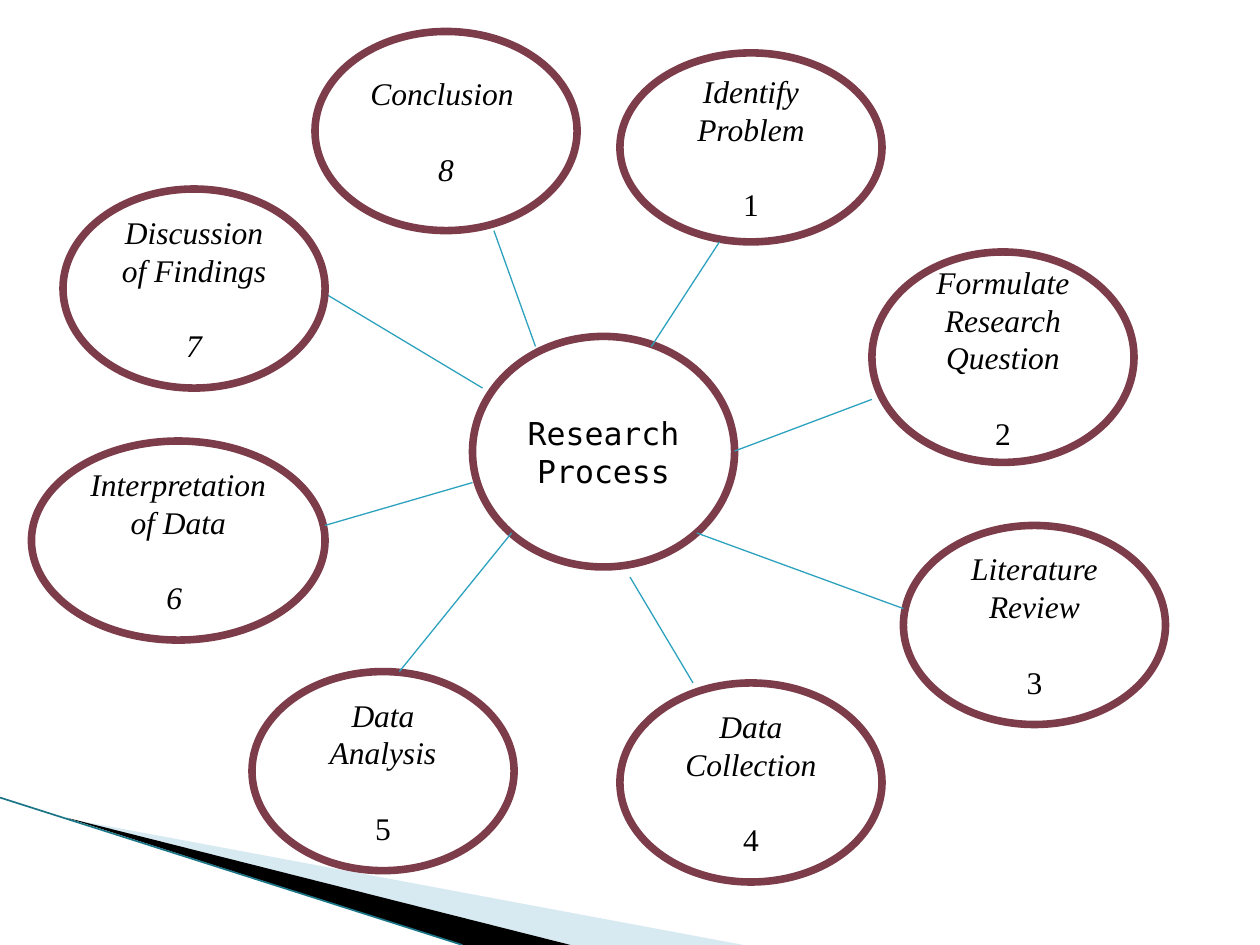
from typing import NamedTuple

from lxml import etree
from pptx import Presentation
from pptx.dml.color import RGBColor
from pptx.enum.shapes import MSO_CONNECTOR, MSO_SHAPE
from pptx.enum.text import MSO_ANCHOR, PP_ALIGN
from pptx.oxml.ns import qn
from pptx.util import Inches, Pt

STRAIGHT = MSO_CONNECTOR.STRAIGHT
OVAL = MSO_SHAPE.FLOWCHART_CONNECTOR
MIDDLE = MSO_ANCHOR.MIDDLE
CENTER = PP_ALIGN.CENTER

SERIF = "Times New Roman"
MONO = "DejaVu Sans Mono"
WHITE, BLACK = "FFFFFF", "000000"
WINE, TEAL, DEEP, PALE = "7D3C4A", "2DA2BF", "1B7587", "D7E9F1"


class Step(NamedTuple):
    label: str
    number: str
    left: float
    top: float
    width: float = 2.08
    height: float = 1.58
    slant: bool = False


class Spoke(NamedTuple):
    x1: float
    y1: float
    x2: float
    y2: float


HUB = Step("Research Process", "", 3.75, 2.67, height=1.83)
STEPS = [
    Step("Identify Problem", "1", 4.92, 0.42, height=1.5),
    Step("Formulate Research Question", "2", 6.92, 2, height=1.67),
    Step("Literature Review", "3", 7.17, 4.17),
    Step("Data Collection", "4", 4.92, 5.42),
    Step("Data Analysis", "5", 2, 5.33),
    Step("Interpretation of Data", "6 ", 0.25, 3.5, width=2.33, slant=True),
    Step("Conclusion ", "8", 2.5, 0.25, slant=True),
]
FRONT = Step("Discussion of Findings", "7", 0.5, 1.5, slant=True)
SPOKES = [
    Spoke(5.17, 2.75, 5.71, 1.92),
    Spoke(5.83, 3.58, 6.92, 3.17),
    Spoke(5.53, 4.23, 7.17, 4.83),
    Spoke(5, 4.58, 5.5, 5.42),
    Spoke(4.06, 4.23, 3.17, 5.33),
    Spoke(3.75, 3.83, 2.58, 4.17),
    Spoke(2.58, 2.33, 3.83, 3.08),
    Spoke(4.25, 2.75, 3.92, 1.83),
]
EDGE = Spoke(0, 6.33, 3.67, 7.5)


def paint(target, color: str):
    target.solid()
    target.fore_color.rgb = RGBColor.from_string(color)


def write(para, text: str, *, font=SERIF, size=18, color=BLACK,
          italic=False, before=0):
    para.alignment = CENTER
    para.space_before = Pt(before)
    run = para.add_run()
    run.text = text
    run.font.name = font
    run.font.size = Pt(size)
    run.font.italic = italic
    paint(run.font.fill, color)


def draw_oval(slide, step: Step):
    oval = slide.shapes.add_shape(
        OVAL, Inches(step.left), Inches(step.top),
        Inches(step.width), Inches(step.height))
    oval.shadow.inherit = False
    paint(oval.fill, WHITE)
    paint(oval.line.fill, WINE)
    oval.line.width = Pt(4.33)
    frame = oval.text_frame
    frame.word_wrap = True
    frame.vertical_anchor = MIDDLE
    return frame


def draw_step(slide, step: Step):
    frame = draw_oval(slide, step)
    write(frame.paragraphs[0], step.label, italic=True)
    write(frame.add_paragraph(), step.number, italic=step.slant, before=21.5)


def draw_line(slide, spoke: Spoke, color: str, width: float):
    line = slide.shapes.add_connector(STRAIGHT, *map(Inches, spoke))
    paint(line.line.fill, color)
    line.line.width = Pt(width)
    etree.SubElement(line._element.spPr, qn("a:effectLst"))


def draw_wedge(slide, points: list[tuple[float, float]], color: str):
    first, *rest = [(Inches(x), Inches(y)) for x, y in points]
    pen = slide.shapes.build_freeform(*first)
    pen.add_line_segments(rest, close=True)
    wedge = pen.convert_to_shape()
    wedge.shadow.inherit = False
    wedge.line.fill.background()
    paint(wedge.fill, color)


def main():
    deck = Presentation()
    deck.slide_width, deck.slide_height = Inches(10), Inches(7.5)
    slide = deck.slides.add_slide(deck.slide_layouts[6])

    draw_wedge(slide, [(0.55, 6.5), (5.9, 7.5), (4.53, 7.5)], PALE)
    draw_wedge(slide, [(0.53, 6.49), (4.53, 7.5), (3.67, 7.5)], BLACK)
    draw_line(slide, EDGE, DEEP, 0.95)

    write(draw_oval(slide, HUB).paragraphs[0], HUB.label, font=MONO)
    for step in STEPS:
        draw_step(slide, step)
    for spoke in SPOKES:
        draw_line(slide, spoke, TEAL, 0.75)
    draw_step(slide, FRONT)

    deck.save("out.pptx")


if __name__ == "__main__":
    main()
